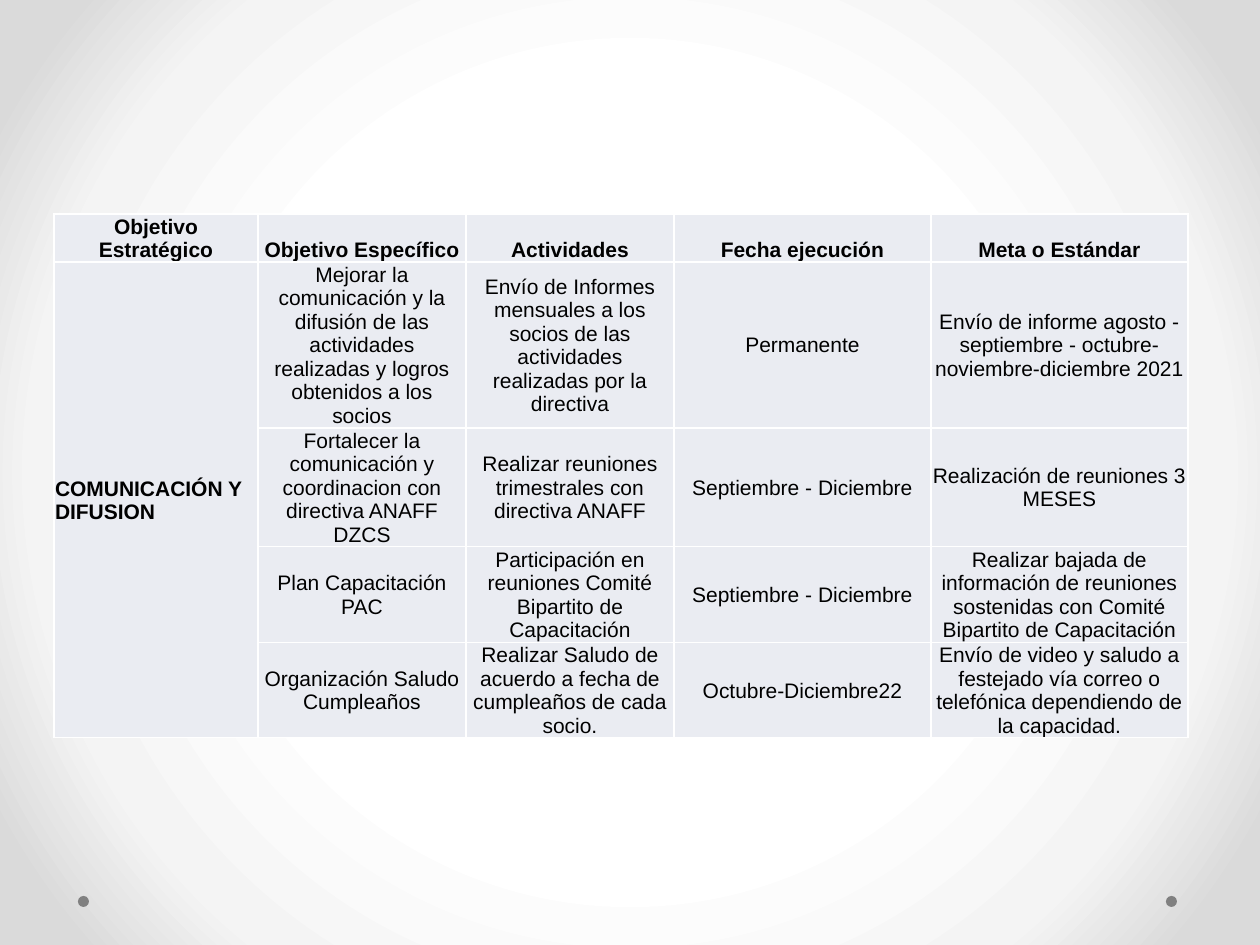
from lxml import etree
from pptx import Presentation
from pptx.dml.color import RGBColor
from pptx.enum.shapes import MSO_SHAPE
from pptx.enum.text import MSO_ANCHOR, PP_ALIGN
from pptx.oxml import parse_xml
from pptx.oxml.ns import nsdecls, qn
from pptx.util import Emu, Pt

OVAL = MSO_SHAPE.OVAL
LEFT, CENTER = PP_ALIGN.LEFT, PP_ALIGN.CENTER
BOTTOM, MIDDLE = MSO_ANCHOR.BOTTOM, MSO_ANCHOR.MIDDLE

BLACK = RGBColor(0x00, 0x00, 0x00)
WHITE = RGBColor(0xFF, 0xFF, 0xFF)
GRAY = RGBColor(0x80, 0x80, 0x80)
CELL_FILL = RGBColor(0xEA, 0xEC, 0xF2)
STOPS = [(50, WHITE), (76, RGBColor(0xF4, 0xF4, 0xF4)), (92, RGBColor(0xDA, 0xDA, 0xDA))]

COLS = [204, 208, 208, 257, 257]
ROWS = [48, 166, 118, 96, 95]
DATA = [
    ["Objetivo Estratégico", "Objetivo Específico", "Actividades",
     "Fecha ejecución", "Meta o Estándar"],
    ["COMUNICACIÓN Y DIFUSION",
     "Mejorar la comunicación y la difusión de las actividades realizadas y logros obtenidos a los socios",
     "Envío de Informes mensuales a los socios de las actividades realizadas por la directiva",
     "Permanente",
     "Envío de informe agosto - septiembre - octubre-noviembre-diciembre 2021"],
    ["", "Fortalecer la comunicación y coordinacion con directiva ANAFF DZCS",
     "Realizar reuniones trimestrales con directiva ANAFF",
     "Septiembre - Diciembre", "Realización de reuniones 3 MESES"],
    ["", "Plan Capacitación PAC",
     "Participación en reuniones Comité Bipartito de Capacitación",
     "Septiembre - Diciembre",
     "Realizar bajada de información de reuniones sostenidas con Comité Bipartito de Capacitación"],
    ["", "Organización Saludo Cumpleaños",
     "Realizar Saludo de acuerdo a fecha de cumpleaños de cada socio.",
     "Octubre-Diciembre22",
     "Envío de video y saludo a festejado vía correo o telefónica dependiendo de la capacidad."],
]


def px(n):
    return Emu(n * 914400 // 126)


def set_attrs(obj, values):
    for name, value in values.items():
        setattr(obj, name, value)


def add_background(s):
    s.background.fill.gradient()
    old = next(s.element.iter(qn("a:gradFill")))
    stops = "".join(
        f'<a:gs pos="{pos * 1000}"><a:srgbClr val="{color}"/></a:gs>' for pos, color in STOPS)
    old.getparent().replace(old, parse_xml(
        f'<a:gradFill {nsdecls("a")} rotWithShape="1"><a:gsLst>{stops}</a:gsLst>'
        '<a:path path="circle"><a:fillToRect l="50000" t="50000" r="50000" b="50000"/>'
        '</a:path></a:gradFill>'))


def add_dots(s, x, y, w, size):
    for left in (x, x + w - size):
        sp = s.shapes.add_shape(OVAL, px(left), px(y), px(size), px(size))
        sp.shadow.inherit = False
        sp.fill.solid()
        sp.fill.fore_color.rgb = GRAY
        sp.line.fill.background()


def add_borders(cell):
    tcPr = cell._tc.get_or_add_tcPr()
    for i, side in enumerate(("lnL", "lnR", "lnT", "lnB")):
        ln = etree.Element(qn(f"a:{side}"), w=str(Pt(1)))
        fill = etree.SubElement(ln, qn("a:solidFill"))
        etree.SubElement(fill, qn("a:srgbClr"), val=str(WHITE))
        tcPr.insert(i, ln)


def format_cell(cell, text, align, anchor, bold):
    set_attrs(cell, {"vertical_anchor": anchor, "margin_left": px(1), "margin_right": px(1),
                     "margin_top": px(1), "margin_bottom": 0})
    cell.fill.solid()
    cell.fill.fore_color.rgb = CELL_FILL
    add_borders(cell)
    if text:
        p = cell.text_frame.paragraphs[0]
        p.alignment = align
        r = p.add_run()
        r.text = text
        set_attrs(r.font, {"name": "Arial", "size": Pt(12), "bold": bold})
        r.font.color.rgb = BLACK


def add_plan_table(s, x, y):
    table = s.shapes.add_table(len(ROWS), len(COLS), px(x), px(y),
                               px(sum(COLS)), px(sum(ROWS))).table
    set_attrs(table, {"first_row": False, "horz_banding": False})
    for col, w in zip(table.columns, COLS):
        col.width = px(w)
    for row, h in zip(table.rows, ROWS):
        row.height = px(h)
    for i, texts in enumerate(DATA):
        for j, text in enumerate(texts):
            header, goal = i == 0, i > 0 and j == 0
            format_cell(table.cell(i, j), text, LEFT if goal else CENTER,
                        BOTTOM if header else MIDDLE, header or goal)
    table.cell(1, 0).merge(table.cell(len(ROWS) - 1, 0))


def main():
    prs = Presentation()
    set_attrs(prs, {"slide_width": px(1260), "slide_height": px(945)})
    s = prs.slides.add_slide(prs.slide_layouts[6])
    add_background(s)
    add_dots(s, 78, 896, 1099, 11)
    add_plan_table(s, 54, 214)
    prs.save("out.pptx")


if __name__ == "__main__":
    main()
